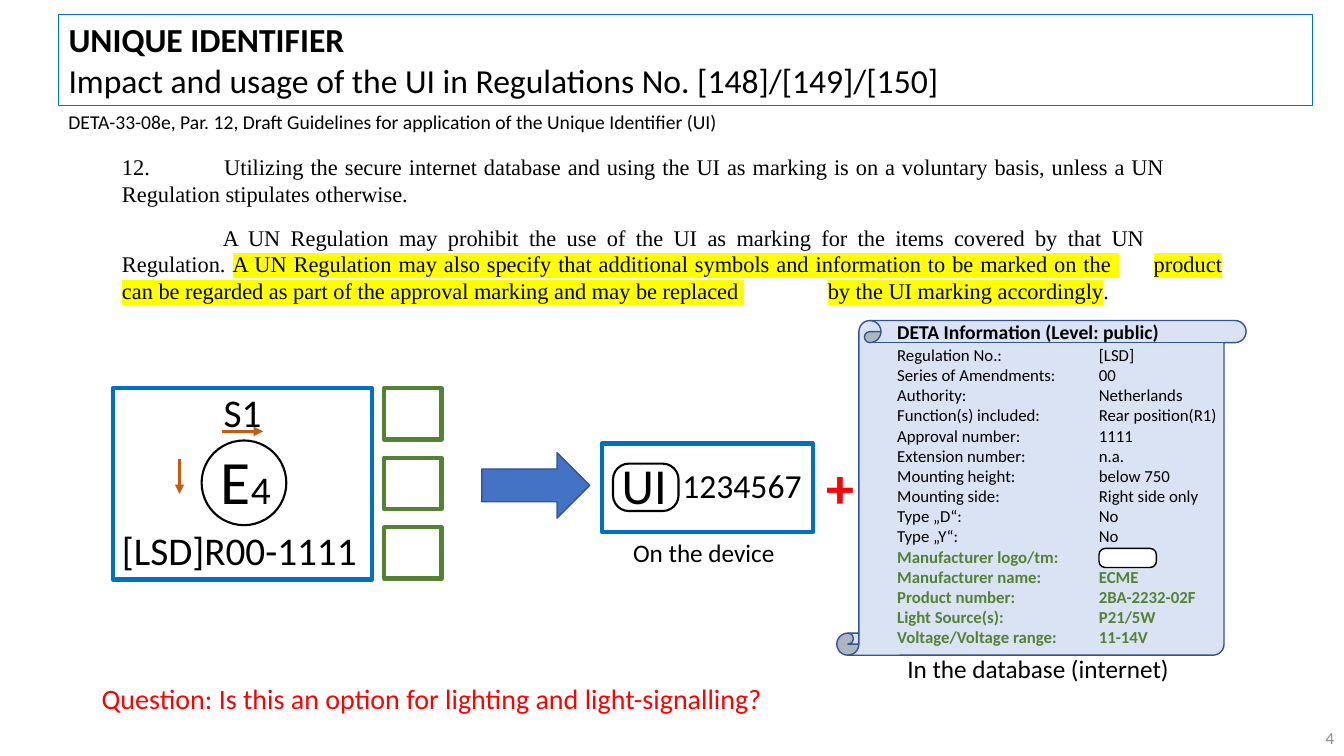
from dataclasses import dataclass

from lxml import etree
from pptx import Presentation
from pptx.dml.color import RGBColor
from pptx.enum.shapes import MSO_CONNECTOR, MSO_SHAPE
from pptx.enum.text import MSO_ANCHOR, MSO_AUTO_SIZE, PP_ALIGN
from pptx.oxml.ns import qn
from pptx.util import Pt

PX = 9144  # 100 px to the inch
LEFT, CENTER, RIGHT, JUSTIFY = PP_ALIGN.LEFT, PP_ALIGN.CENTER, PP_ALIGN.RIGHT, PP_ALIGN.JUSTIFY
RECTANGLE, ROUNDED, OVAL = MSO_SHAPE.RECTANGLE, MSO_SHAPE.ROUNDED_RECTANGLE, MSO_SHAPE.OVAL
ARROW, SCROLL = MSO_SHAPE.RIGHT_ARROW, MSO_SHAPE.VERTICAL_SCROLL
STRAIGHT = MSO_CONNECTOR.STRAIGHT
TOP, NO_AUTOFIT = MSO_ANCHOR.TOP, MSO_AUTO_SIZE.NONE


@dataclass(frozen=True)
class Theme:
    sans: str = "Calibri"
    serif: str = "Times New Roman"
    black: str = "000000"
    white: str = "FFFFFF"
    blue: str = "0070C0"
    arrow: str = "4472C4"
    edge: str = "325491"
    panel: str = "DAE3F3"
    green: str = "548235"
    orange: str = "C55A11"
    red: str = "FF0000"
    yellow: str = "FFFF00"
    grey: str = "8C8C8C"
    letter: int = 44
    plus: int = 40
    identifier: int = 36
    mark: int = 28
    title: int = 24
    question: int = 20
    caption: int = 18
    body: int = 16
    label: int = 14
    detail: int = 12


theme = Theme()
presentation = Presentation()
presentation.slide_width = 1333 * PX
presentation.slide_height = 750 * PX
slide = presentation.slides.add_slide(presentation.slide_layouts[1])


def add_run(paragraph, text, size, color=theme.black, bold=False, font=theme.sans):
    run = paragraph.add_run()
    run.text = text
    run.font.name = font
    run.font.size = Pt(size)
    run.font.bold = bold
    run.font.color.rgb = RGBColor.from_string(color)
    return run


def add_outline(kind, box, line, width, fill=None, adjustment=None):
    """Add a preset shape without shadow; it is hollow when no fill is given."""
    shape = slide.shapes.add_shape(kind, *(length * PX for length in box))
    shape.shadow.inherit = False
    shape.line.color.rgb = RGBColor.from_string(line)
    shape.line.width = Pt(width)
    if fill:
        shape.fill.solid()
        shape.fill.fore_color.rgb = RGBColor.from_string(fill)
    else:
        shape.fill.background()
    if adjustment is not None:
        shape.adjustments[0] = adjustment


# Title and guideline text
title, body = slide.shapes.title, slide.placeholders[1]
for placeholder, box in ((title, (58, 14, 1244, 91)), (body, (111, 147, 1111, 162))):
    placeholder.left, placeholder.top, placeholder.width, placeholder.height = (
        length * PX for length in box
    )
    placeholder.text_frame.auto_size = NO_AUTOFIT
    placeholder.text_frame.vertical_anchor = TOP

title.line.color.rgb = RGBColor.from_string(theme.blue)
title.line.width = Pt(0.75)
heading = title.text_frame.paragraphs[0]
subheading = title.text_frame.add_paragraph()
add_run(heading, "UNIQUE IDENTIFIER", theme.title, bold=True)
add_run(
    subheading,
    "Impact and usage of the UI in Regulations No. [148]/[149]/[150]",
    theme.title,
)
for paragraph in (heading, subheading):
    paragraph.alignment = LEFT
    paragraph.line_spacing = 1.0
    paragraph.space_before = Pt(0)

numbered = body.text_frame.paragraphs[0]
continued = body.text_frame.add_paragraph()
guideline_runs = [
    (numbered, " \tUtilizing the secure internet database and using the UI as marking is on a "
               "voluntary basis, unless a UN \tRegulation stipulates otherwise.", False),
    (continued, "\tA UN Regulation may prohibit the use of the UI as marking for the items "
                "covered by that UN \tRegulation. ", False),
    (continued, "A UN Regulation may also specify that additional symbols and information "
                "to be marked on the ", True),
    (continued, "\t", False),
    (continued, "product can be regarded as part of the approval marking and may be replaced ", True),
    (continued, "\t", False),
    (continued, "by the UI marking accordingly", True),
    (continued, ".", False),
]
for paragraph, text, highlighted in guideline_runs:
    run = add_run(paragraph, text, theme.body, font=theme.serif)
    if highlighted:
        highlight = etree.Element(qn("a:highlight"))
        etree.SubElement(highlight, qn("a:srgbClr"), val=theme.yellow)
        run.font._element.find(qn("a:latin")).addprevious(highlight)

for paragraph in (numbered, continued):
    paragraph.alignment = JUSTIFY
    paragraph.line_spacing = 1.0
    paragraph.space_before = Pt(0)
    paragraph.space_after = Pt(12)
    properties = paragraph._p.get_or_add_pPr()
    properties.set("marL", "0")
    properties.set("indent", "0")
    properties.set("defTabSz", str(100 * PX))
    if paragraph is numbered:
        etree.SubElement(properties, qn("a:buAutoNum"), type="arabicPeriod", startAt="12")
    else:
        etree.SubElement(properties, qn("a:buNone"))

# Marking, arrow, identifier and database scroll
add_outline(SCROLL, (830, 318, 406, 332), theme.edge, 1, theme.panel, 0.066)
add_outline(OVAL, (200, 437, 84, 84), theme.black, 1.5)
add_outline(ARROW, (478, 449, 107, 65), theme.edge, 1, theme.arrow)
add_outline(ROUNDED, (608, 460, 65, 47), theme.black, 1.5, theme.white, 0.334)
add_outline(ROUNDED, (1090, 544, 57, 19), theme.black, 1, theme.white, 0.334)
for box in ((112, 385, 257, 190), (597, 440, 209, 88)):
    add_outline(RECTANGLE, box, theme.blue, 3)
for row in range(3):
    add_outline(RECTANGLE, (381, 385 + 69 * row, 57, 51), theme.green, 3)

for ends in ((220, 428, 261, 428), (178, 455, 178, 490)):
    direction = slide.shapes.add_connector(STRAIGHT, *(length * PX for length in ends))
    direction.line.color.rgb = RGBColor.from_string(theme.orange)
    direction.line.width = Pt(2.25)
    etree.SubElement(direction.line._get_or_add_ln(), qn("a:tailEnd"), type="triangle")
    etree.SubElement(direction._element.spPr, qn("a:effectLst"))

# Single-line labels: box, alignment, exact line spacing, runs
labels = [
    ((58, 104, 671, 34), LEFT, None,
     [("DETA-33-08e, Par. 12, Draft Guidelines for application of the Unique Identifier (UI)",
       theme.label)]),
    ((209, 434, 107, 84), LEFT, None, [("E", theme.letter), ("4", theme.mark)]),
    ((111, 522, 257, 52), LEFT, 30, [("[LSD]R00-1111", theme.mark)]),
    ((212, 385, 58, 52), LEFT, 30, [("S1", theme.mark)]),
    ((599, 446, 80, 71), CENTER, None, [("UI", theme.identifier)]),
    ((667, 456, 145, 50), LEFT, None, [("1234567", theme.title)]),
    ((880, 312, 312, 34), LEFT, None,
     [("DETA Information (Level: public)", theme.label, theme.black, True)]),
    ((810, 444, 40, 77), CENTER, None, [("+", theme.plus, theme.red, True)]),
    ((91, 671, 1178, 44), LEFT, None,
     [("Question: Is this an option for lighting and light-signalling?", theme.question, theme.red)]),
    ((618, 528, 188, 40), LEFT, None, [("On the device", theme.caption)]),
    ((890, 643, 302, 40), LEFT, None, [("In the database (internet)", theme.caption)]),
    ((1033, 717, 300, 34), RIGHT, None, [("4", theme.detail, theme.grey)]),
]
for box, alignment, spacing, runs in labels:
    label = slide.shapes.add_textbox(*(length * PX for length in box))
    label.text_frame.word_wrap = True
    paragraph = label.text_frame.paragraphs[0]
    paragraph.alignment = alignment
    if spacing:
        paragraph.line_spacing = Pt(spacing)
    for run in runs:
        add_run(paragraph, *run)

# Database entries
entries = [
    ("Regulation No.:", "[LSD]"),
    ("Series of Amendments:", "00"),
    ("Authority:", "Netherlands"),
    ("Function(s) included:", "Rear position(R1)"),
    ("Approval number:", "1111"),
    ("Extension number:", "n.a."),
    ("Mounting height:", "below 750"),
    ("Mounting side:", "Right side only"),
    ("Type „D“:", "No"),
    ("Type „Y“:", "No"),
    ("Manufacturer logo/tm:", ""),
    ("Manufacturer name:", "ECME"),
    ("Product number:", "2BA-2232-02F"),
    ("Light Source(s):", "P21/5W"),
    ("Voltage/Voltage range:", "11-14V"),
]
database = slide.shapes.add_textbox(880 * PX, 337 * PX, 341 * PX, 313 * PX).text_frame
database.word_wrap = True
for index, (name, value) in enumerate(entries):
    paragraph = database.add_paragraph() if index else database.paragraphs[0]
    optional = index >= 10
    color = theme.green if optional else theme.black
    add_run(paragraph, f"{name}\t{value}", theme.detail, color, optional)
    tab_list = etree.SubElement(paragraph._p.get_or_add_pPr(), qn("a:tabLst"))
    etree.SubElement(tab_list, qn("a:tab"), pos=str(200 * PX), algn="l")

presentation.save("out.pptx")
